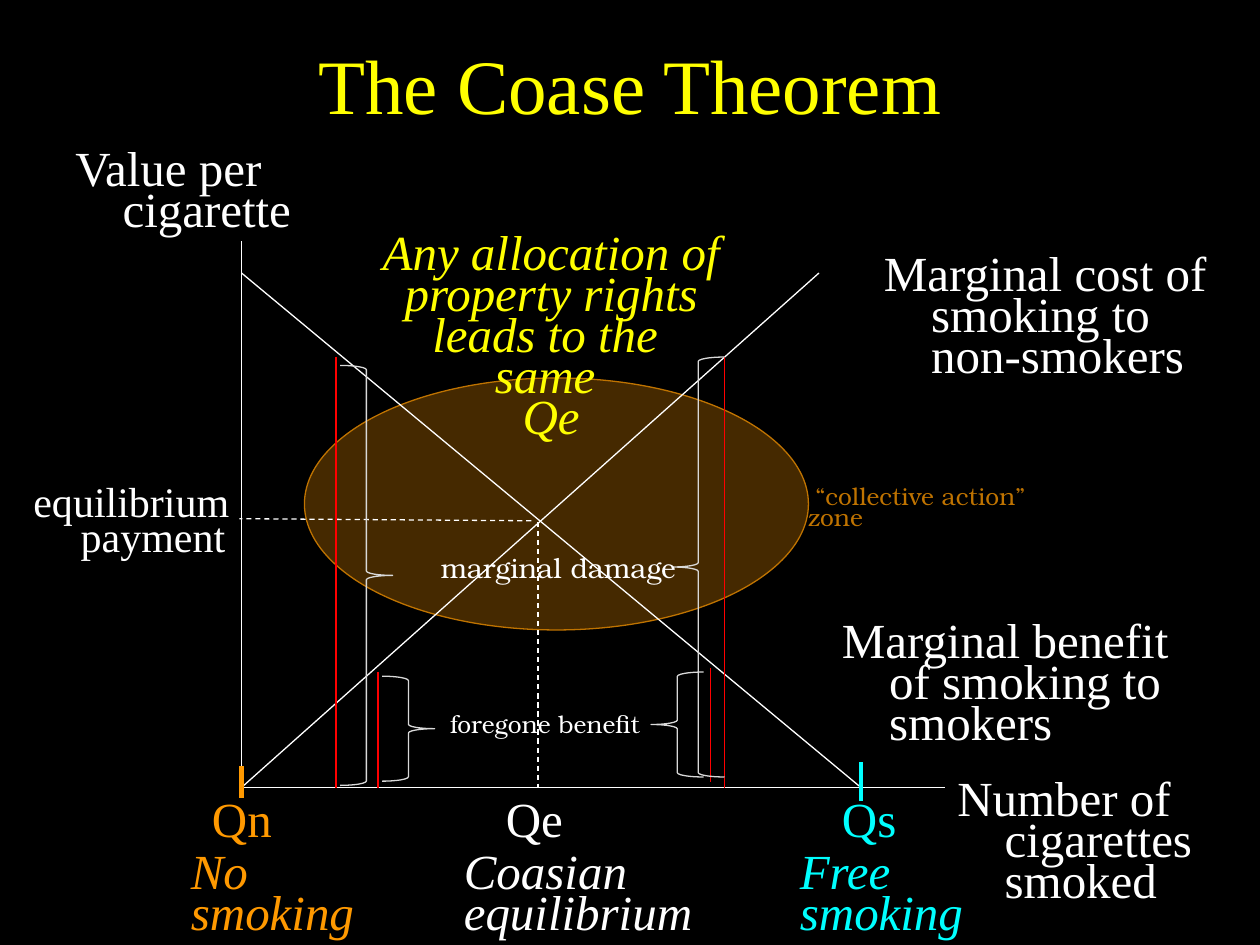
from lxml import etree
from pptx import Presentation
from pptx.dml.color import RGBColor
from pptx.enum.dml import MSO_LINE
from pptx.enum.shapes import MSO_CONNECTOR, MSO_SHAPE
from pptx.enum.text import MSO_ANCHOR, MSO_AUTO_SIZE, PP_ALIGN
from pptx.oxml.ns import qn
from pptx.util import Inches, Pt

STRAIGHT = MSO_CONNECTOR.STRAIGHT
ELLIPSE, BRACE = MSO_SHAPE.OVAL, MSO_SHAPE.RIGHT_BRACE
DASH = MSO_LINE.DASH
LEFT, CENTER = PP_ALIGN.LEFT, PP_ALIGN.CENTER

COLORS = {
    "black": "000000", "white": "FFFFFF", "yellow": "FFFF00",
    "orange": "FF9900", "brown": "BF7300", "cyan": "00FFFF",
    "red": "FF0000", "grey": "D9D9D9",
}
SERIF, BOOK = "Times New Roman", "TeX Gyre Bonum"

# The grid has 120 columns and 90 rows, twelve to the inch
COLUMNS, ROWS, PER_INCH = 120, 90, 12
AXIS_X, AXIS_Y = 23, 75
QE_X, QS_X = 51.25, 82
HANGING = 4.5


def grid(cells):
    return Inches(cells / PER_INCH)


def color(name):
    return RGBColor.from_string(COLORS[name])


def add_line(slide, start, end, paint="white", width=0.75, dash=None):
    line = slide.shapes.add_connector(STRAIGHT, *map(grid, start + end))
    line.line.color.rgb = color(paint)
    line.line.width = Pt(width)
    if dash:
        line.line.dash_style = dash
    etree.SubElement(line._element.spPr, qn("a:effectLst"))


def add_outline(slide, kind, box, paint):
    shape = slide.shapes.add_shape(kind, *map(grid, box))
    shape.shadow.inherit = False
    shape.fill.background()
    shape.line.color.rgb = color(paint)
    shape.line.width = Pt(0.75)
    return shape


def add_zone(slide):
    zone = add_outline(slide, ELLIPSE, (29, 36, 48, 24), "brown")
    zone.fill.solid()
    zone.fill.fore_color.rgb = color("orange")
    fill_color = zone._element.spPr.find(qn("a:solidFill"))[0]
    etree.SubElement(fill_color, qn("a:alpha"), val="27000")


def add_brace(slide, left, top, height, rotation=0):
    brace = add_outline(slide, BRACE, (left, top, 5, height), "grey")
    brace.rotation = rotation


def set_space_before(paragraph, percent):
    paragraph.space_before = Pt(0)
    space = paragraph._p.pPr.find(qn("a:spcBef"))
    space.remove(space[0])
    etree.SubElement(space, qn("a:spcPct"), val=str(percent * 1000))


def set_indent(paragraph, margin, first_line):
    properties = paragraph._p.get_or_add_pPr()
    properties.set("marL", str(grid(margin)))
    properties.set("indent", str(grid(first_line)))


def add_text(slide, text, box, paint="white", size=28, font=SERIF, italic=False,
             align=LEFT, before=50, margin=0, first_line=0, spacing=0.7):
    label = slide.shapes.add_textbox(*map(grid, box))
    frame = label.text_frame
    frame.word_wrap = True
    frame.auto_size = MSO_AUTO_SIZE.SHAPE_TO_FIT_TEXT
    frame.text = text
    for paragraph in frame.paragraphs:
        paragraph.alignment = align
        paragraph.line_spacing = spacing
        set_space_before(paragraph, before)
        set_indent(paragraph, margin, first_line)
        style = paragraph.runs[0].font
        style.name, style.size, style.italic = font, Pt(size), italic
        style.color.rgb = color(paint)
    return frame


def add_hanging(slide, text, box, paint="white", size=28):
    add_text(slide, text, box, paint, size, margin=HANGING, first_line=-HANGING)


def add_title(slide):
    frame = add_text(slide, "The Coase Theorem", (9, 2, 102, 12), "yellow", 44,
                     align=CENTER, before=0, spacing=1.0)
    frame.auto_size = MSO_AUTO_SIZE.NONE
    frame.vertical_anchor = MSO_ANCHOR.MIDDLE


def add_curves(slide):
    origin = (AXIS_X, AXIS_Y)
    add_line(slide, (AXIS_X, 23), origin)
    add_line(slide, origin, (90, AXIS_Y))
    add_line(slide, origin, (78, 26))                # marginal cost
    add_line(slide, (AXIS_X, 26), (QS_X, AXIS_Y))    # marginal benefit


def add_axis_labels(slide):
    for text, box in (
        ("Number of cigarettes smoked", (90, 74, 27, 13)),
        ("Value per cigarette", (6, 14, 24, 9)),
        ("Marginal cost of smoking to non-smokers", (83, 24, 34, 13)),
        ("Marginal benefit of smoking to smokers", (79, 59, 34, 13)),
    ):
        add_hanging(slide, text, box)


def add_equilibrium(slide):
    add_line(slide, (QE_X, 49.7), (QE_X, AXIS_Y), dash=DASH)
    add_line(slide, (50.6, 49.6), (22.8, 49.4), dash=DASH)
    add_hanging(slide, "equilibrium payment", (2, 46, 22, 7.9), size=24)


def add_quantities(slide):
    add_line(slide, (QS_X, 72.6), (QS_X, 76.3), "cyan", 2.25)
    add_line(slide, (AXIS_X, 73), (AXIS_X, 76), "orange", 3)
    for symbol, left, meaning, meaning_left, width, paint in (
        ("Qn", 19, "No smoking", 17, 22, "orange"),
        ("Qs", 79, "Free smoking", 75, 19, "cyan"),
        ("Qe", 47, "Coasian equilibrium", 43, 25, "white"),
    ):
        add_hanging(slide, symbol, (left, 76, 10, 5.2), paint)
        add_text(slide, meaning, (meaning_left, 81, width, 9), paint, italic=True)


def add_measures(slide):
    for x, top, bottom in ((69, 34, 75), (67.7, 63.6, 74.5), (32, 34, 75), (36, 64, 75)):
        add_line(slide, (x, top), (x, bottom), "red")
    add_brace(slide, 64, 34, 40, rotation=180)
    add_brace(slide, 62, 64, 10, rotation=180)
    add_brace(slide, 32.4, 34.8, 40)
    add_brace(slide, 36.4, 64.4, 10)
    for text, box, size, paint, first_line in (
        ("marginal damage", (37.5, 52.7, 37, 3.5), 16, "white", 3.3),
        ("foregone benefit", (41, 67.7, 28, 3.2), 14, "white", 0.7),
        ("“collective action” zone", (75.8, 46, 28, 3.2), 14, "brown", 0.7),
    ):
        add_text(slide, text, box, paint, size, BOOK, before=20, first_line=first_line)


def main():
    deck = Presentation()
    deck.slide_width, deck.slide_height = grid(COLUMNS), grid(ROWS)
    slide = deck.slides.add_slide(deck.slide_layouts[6])
    slide.background.fill.solid()
    slide.background.fill.fore_color.rgb = color("black")

    add_zone(slide)
    add_title(slide)
    add_curves(slide)
    add_axis_labels(slide)
    add_equilibrium(slide)
    add_quantities(slide)
    # Conclusion above the crossing
    add_text(slide, "Any allocation of property rights leads to the \nsame \nQe",
             (35, 22, 35, 20.8), "yellow", italic=True, align=CENTER, before=0)
    add_measures(slide)
    deck.save("out.pptx")


if __name__ == "__main__":
    main()
